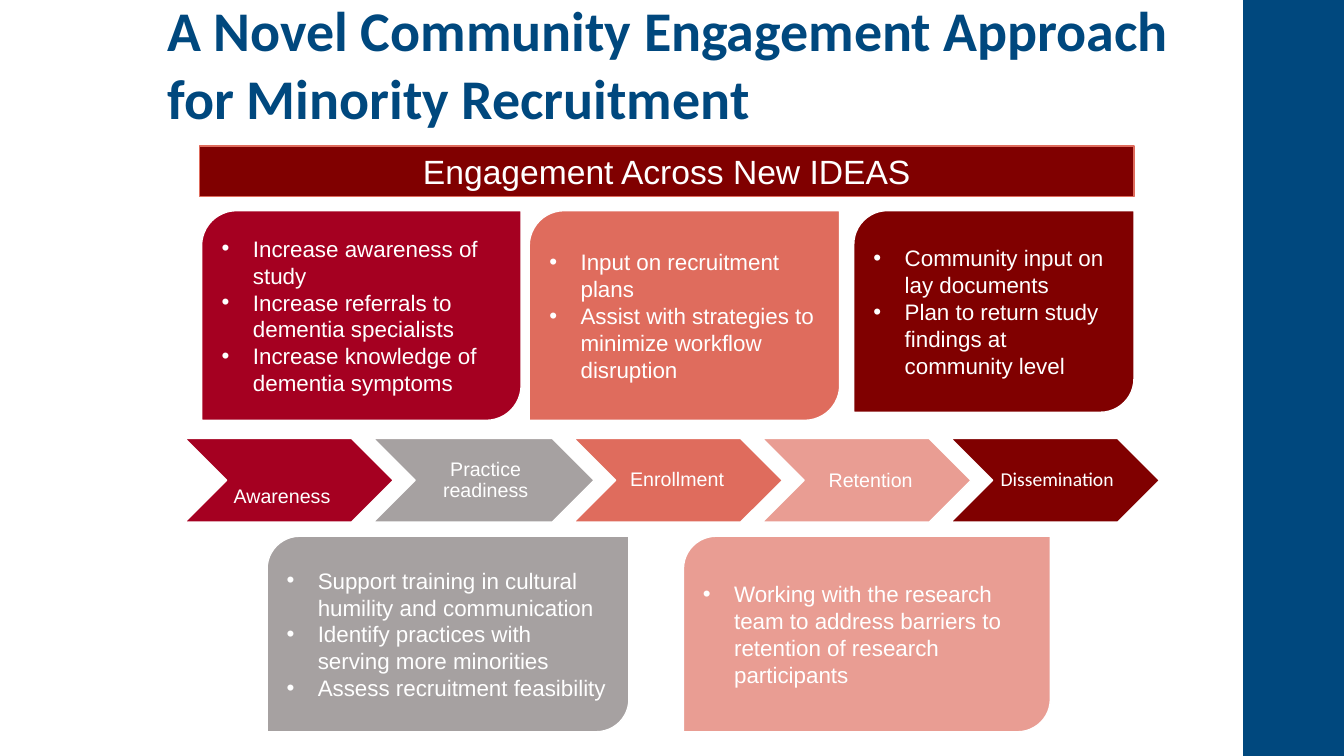
from lxml import etree
from pptx import Presentation
from pptx.dml.color import RGBColor
from pptx.enum.shapes import MSO_SHAPE
from pptx.enum.text import MSO_ANCHOR, MSO_AUTO_SIZE, PP_ALIGN
from pptx.oxml.ns import qn
from pptx.util import Inches, Pt

RECT = MSO_SHAPE.RECTANGLE
CHEVRON = MSO_SHAPE.CHEVRON
CARD = MSO_SHAPE.ROUND_2_DIAG_RECTANGLE
TOP, MIDDLE = MSO_ANCHOR.TOP, MSO_ANCHOR.MIDDLE
LEFT, CENTER = PP_ALIGN.LEFT, PP_ALIGN.CENTER

WHITE = RGBColor(0xFF, 0xFF, 0xFF)
BLUE = RGBColor(0x00, 0x48, 0x7E)
CRIMSON = RGBColor(0xA5, 0x00, 0x21)
GRAY = RGBColor(0xA6, 0xA1, 0xA1)
CORAL = RGBColor(0xDF, 0x6C, 0x5D)
PINK = RGBColor(0xE9, 0x9D, 0x93)
MAROON = RGBColor(0x80, 0x00, 0x00)

# Grid of 40 columns and 30 rows
WIDTH, HEIGHT = Inches(13.33), Inches(7.5)
COLUMN, ROW = WIDTH / 40, HEIGHT / 30
INDENT = Inches(0.31)

# Boxes are (column, row, columns, rows)
BAND_BOX = (37, 0, 3, 30)
TITLE_BOX = (4.68, -0.36, 31.14, 5.8)
BANNER_BOX = (5.94, 5.8, 27.81, 2)
STAGES_BOX = (5.5, 17.4, 28.8, 3.32)
STAGE_OVERLAP = 0.6

# Label, fill, columns, font, insets in inches (left, top, right, bottom)
STAGES = [
    ("Awareness", CRIMSON, 6.21, "Arial", (0, 0.35, 0.14, 0.02)),
    ("Practice readiness", GRAY, 6.57, "Arial", (0.06, 0.02, 0.02, 0.02)),
    ("Enrollment", CORAL, 6.21, "Arial", (0.06, 0.02, 0.08, 0.02)),
    ("Retention", PINK, 6.21, "Arial", (0.11, 0.05, 0.03, 0.03)),
    ("Dissemination", MAROON, 6.21, "Calibri", (0.06, 0.02, 0.02, 0.02)),
]

CARDS = [
    ((6, 8.36, 9.51, 8.32), CRIMSON,
     ["Increase awareness of study",
      "Increase referrals to dementia specialists",
      "Increase knowledge of dementia symptoms"]),
    ((15.75, 8.36, 9.24, 8.32), CORAL,
     ["Input on recruitment plans",
      "Assist with strategies to minimize workflow disruption"]),
    ((25.41, 8.36, 8.34, 8), MAROON,
     ["Community input on lay documents",
      "Plan to return study findings at community level"]),
    ((7.95, 21.28, 10.77, 7.76), GRAY,
     ["Support training in cultural humility and communication",
      "Identify practices with serving more minorities",
      "Assess recruitment feasibility"]),
    ((20.34, 21.28, 10.92, 7.76), PINK,
     ["Working with the research team to address barriers to "
      "retention of research participants"]),
]


def place(box):
    column, row, columns, rows = box
    return [round(length) for length in
            (column * COLUMN, row * ROW, columns * COLUMN, rows * ROW)]


def set_all(target, values):
    for name, value in values.items():
        setattr(target, name, value)


def format_font(para, name, size, color, bold=False):
    set_all(para.font, {"name": name, "size": Pt(size), "bold": bold})
    para.font.color.rgb = color


def add_block(page, kind, box, fill, line=WHITE):
    block = page.shapes.add_shape(kind, *place(box))
    block.shadow.inherit = False
    block.fill.solid()
    block.fill.fore_color.rgb = fill
    block.line.color.rgb = line
    block.line.width = Pt(1)
    set_all(block.text_frame, {"word_wrap": True, "vertical_anchor": MIDDLE})
    return block


def add_bullet(para):
    properties = para._p.get_or_add_pPr()
    properties.set("marL", str(INDENT))
    properties.set("indent", str(-INDENT))
    etree.SubElement(properties, qn("a:buFont")).set("typeface", "Arial")
    etree.SubElement(properties, qn("a:buChar")).set("char", "•")


def add_title(page, box):
    title = page.shapes.title
    set_all(title, dict(zip(("left", "top", "width", "height"), place(box))))
    frame = title.text_frame
    frame.text = "A Novel Community Engagement Approach for Minority Recruitment"
    set_all(frame, {"word_wrap": True, "vertical_anchor": TOP,
                    "auto_size": MSO_AUTO_SIZE.NONE})
    para = frame.paragraphs[0]
    set_all(para, {"alignment": LEFT, "line_spacing": 1.0})
    format_font(para, "Calibri", 40, BLUE, bold=True)


def add_banner(page, box):
    banner = add_block(page, RECT, box, MAROON, CORAL)
    para = banner.text_frame.paragraphs[0]
    para.text = "Engagement Across New IDEAS"
    para.alignment = CENTER
    format_font(para, "Arial", 24, WHITE)


def add_stages(page, box):
    column, row, _, rows = box
    sides = ("margin_left", "margin_top", "margin_right", "margin_bottom")
    for label, fill, columns, font, insets in STAGES:
        stage = add_block(page, CHEVRON, (column, row, columns, rows), fill)
        set_all(stage.text_frame, dict(zip(sides, map(Inches, insets))))
        para = stage.text_frame.paragraphs[0]
        para.text = label
        set_all(para, {"alignment": CENTER, "line_spacing": 0.9})
        format_font(para, font, 14, WHITE)
        column += columns - STAGE_OVERLAP


def add_card(page, box, fill, points):
    frame = add_block(page, CARD, box, fill).text_frame
    frame.text = "\n".join(points)
    for para in frame.paragraphs:
        para.alignment = LEFT
        add_bullet(para)
        format_font(para, "Arial", 16, WHITE)


def main():
    deck = Presentation()
    set_all(deck, {"slide_width": WIDTH, "slide_height": HEIGHT})
    page = deck.slides.add_slide(deck.slide_layouts[5])

    # Side band and heading
    add_block(page, RECT, BAND_BOX, BLUE).line.fill.background()
    add_title(page, TITLE_BOX)

    # Process stages with the engagement cards around them
    add_stages(page, STAGES_BOX)
    for box, fill, points in CARDS:
        add_card(page, box, fill, points)
    add_banner(page, BANNER_BOX)

    deck.save("out.pptx")


if __name__ == "__main__":
    main()
